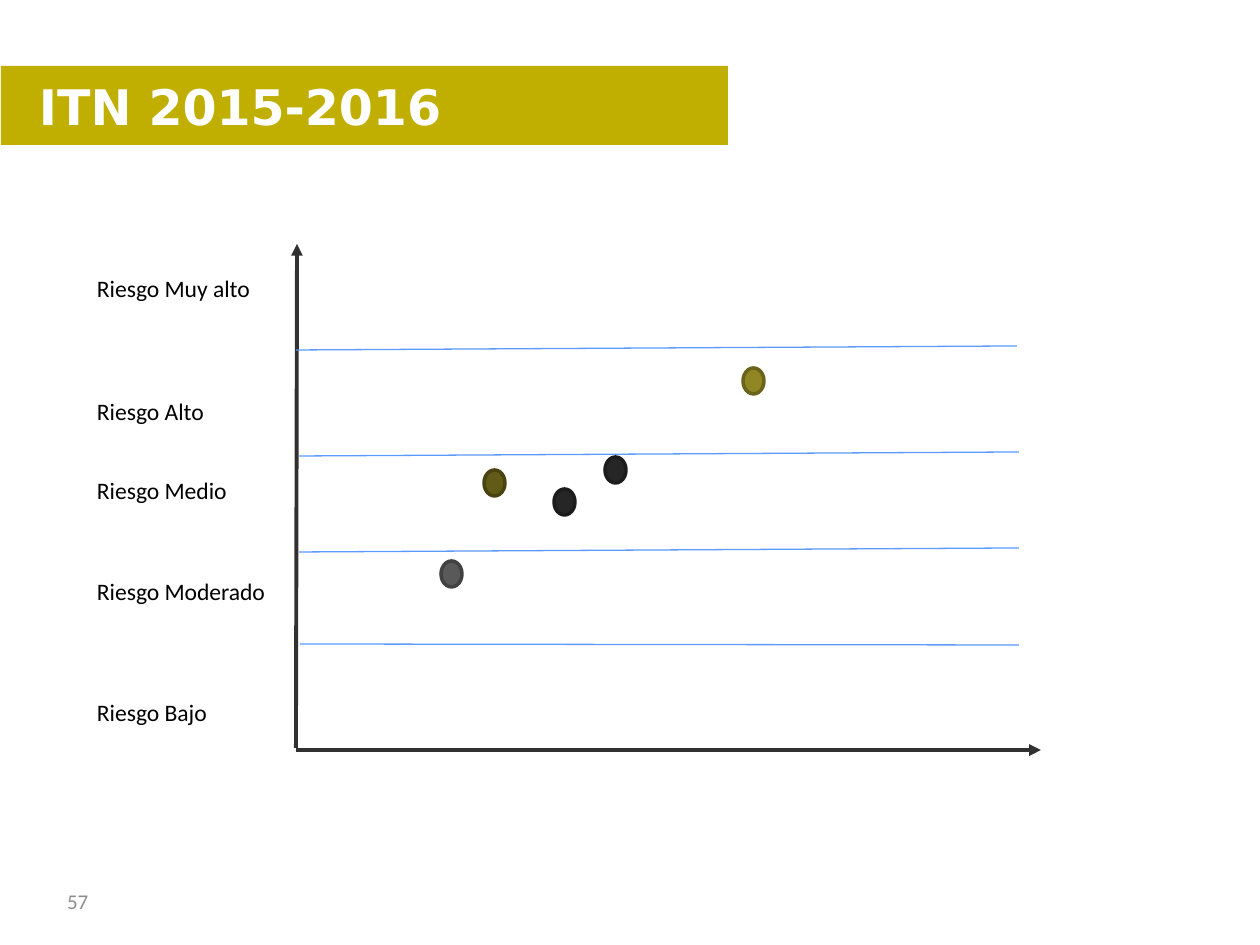
from dataclasses import dataclass

from lxml import etree
from pptx import Presentation
from pptx.dml.color import RGBColor
from pptx.enum.shapes import MSO_CONNECTOR, MSO_SHAPE
from pptx.enum.text import MSO_ANCHOR, PP_ALIGN
from pptx.oxml.ns import qn
from pptx.util import Emu, Pt

STRAIGHT = MSO_CONNECTOR.STRAIGHT
RECTANGLE, OVAL = MSO_SHAPE.RECTANGLE, MSO_SHAPE.OVAL
TOP, MIDDLE = MSO_ANCHOR.TOP, MSO_ANCHOR.MIDDLE
LEFT = PP_ALIGN.LEFT

PX_PER_INCH = 126


def px(length: int) -> Emu:
    return Emu(round(length * 914400 / PX_PER_INCH))


@dataclass(frozen=True)
class Theme:
    band: str = "C0AE00"
    axis: str = "313131"
    boundary: str = "5C9AFF"
    title: tuple = ("DejaVu Sans", 28, True, "FFFFFF")
    label: tuple = ("Calibri", 13.5, False, "000000")
    number: tuple = ("Calibri", 12, False, "8E8E8E")
    axis_width: float = 2.25
    boundary_width: float = 0.75
    dot_width: float = 2


@dataclass(frozen=True)
class Line:
    x1: int
    y1: int
    x2: int
    y2: int


@dataclass(frozen=True)
class Dot:
    x: int
    y: int
    fill: str
    outline: str


THEME = Theme()

AXES = [Line(296, 750, 1041, 750), Line(296, 748, 297, 244)]
BOUNDARIES = [
    Line(296, 350, 1017, 346),
    Line(299, 456, 1019, 452),
    Line(299, 552, 1019, 548),
    Line(300, 644, 1019, 645),
]
RISK_LEVELS = {
    "Riesgo Muy alto": 268,
    "Riesgo Alto": 391,
    "Riesgo Medio": 470,
    "Riesgo Moderado": 571,
    "Riesgo Bajo": 692,
}
DOTS = [
    Dot(484, 470, "625B18", "494312"),
    Dot(554, 489, "262626", "1C1C1C"),
    Dot(441, 561, "595959", "424242"),
    Dot(743, 368, "908624", "6B631B"),
    Dot(605, 457, "262626", "1C1C1C"),
]


def write(shape, text: str, style: tuple, anchor, indent: int = 0) -> None:
    frame = shape.text_frame
    frame_format = {
        "word_wrap": True,
        "vertical_anchor": anchor,
        "margin_left": px(13 + indent),
    }
    for name, value in frame_format.items():
        setattr(frame, name, value)
    paragraph = frame.paragraphs[0]
    paragraph.alignment = LEFT
    run = paragraph.add_run()
    run.text = text
    family, size, bold, color = style
    for name, value in {"name": family, "size": Pt(size), "bold": bold}.items():
        setattr(run.font, name, value)
    run.font.color.rgb = RGBColor.from_string(color)


def add_text(slide, box: tuple, text: str, style: tuple, anchor=TOP) -> None:
    write(slide.shapes.add_textbox(*map(px, box)), text, style, anchor)


def add_filled(slide, kind, box: tuple, fill: str):
    shape = slide.shapes.add_shape(kind, *map(px, box))
    shape.shadow.inherit = False
    shape.fill.solid()
    shape.fill.fore_color.rgb = RGBColor.from_string(fill)
    return shape


def set_line(line, color: str, width: float) -> None:
    line.color.rgb = RGBColor.from_string(color)
    line.width = Pt(width)


def add_line(slide, ends: Line, color: str, width: float, arrow: bool = False) -> None:
    points = (ends.x1, ends.y1, ends.x2, ends.y2)
    connector = slide.shapes.add_connector(STRAIGHT, *map(px, points))
    set_line(connector.line, color, width)
    properties = connector._element.spPr
    if arrow:
        outline = properties.find(qn("a:ln"))
        etree.SubElement(outline, qn("a:tailEnd"), type="triangle")
    etree.SubElement(properties, qn("a:effectLst"))


def add_dot(slide, dot: Dot) -> None:
    oval = add_filled(slide, OVAL, (dot.x, dot.y, 21, 26), dot.fill)
    set_line(oval.line, dot.outline, THEME.dot_width)


def main() -> None:
    deck = Presentation()
    deck.slide_width, deck.slide_height = px(1260), px(945)
    slide = deck.slides.add_slide(deck.slide_layouts[6])

    # Slide number and title band
    add_text(slide, (54, 876, 294, 50), "57", THEME.number, MIDDLE)
    band = add_filled(slide, RECTANGLE, (1, 66, 727, 79), THEME.band)
    band.line.fill.background()
    write(band, "ITN 2015-2016", THEME.title, MIDDLE, indent=25)

    # Axes and the boundaries between risk levels
    for axis in AXES:
        add_line(slide, axis, THEME.axis, THEME.axis_width, arrow=True)
    for boundary in BOUNDARIES:
        add_line(slide, boundary, THEME.boundary, THEME.boundary_width)

    # Risk level labels
    for level, top in RISK_LEVELS.items():
        add_text(slide, (84, top, 197, 42), level, THEME.label)

    # Plotted points
    for dot in DOTS:
        add_dot(slide, dot)

    deck.save("out.pptx")


if __name__ == "__main__":
    main()
